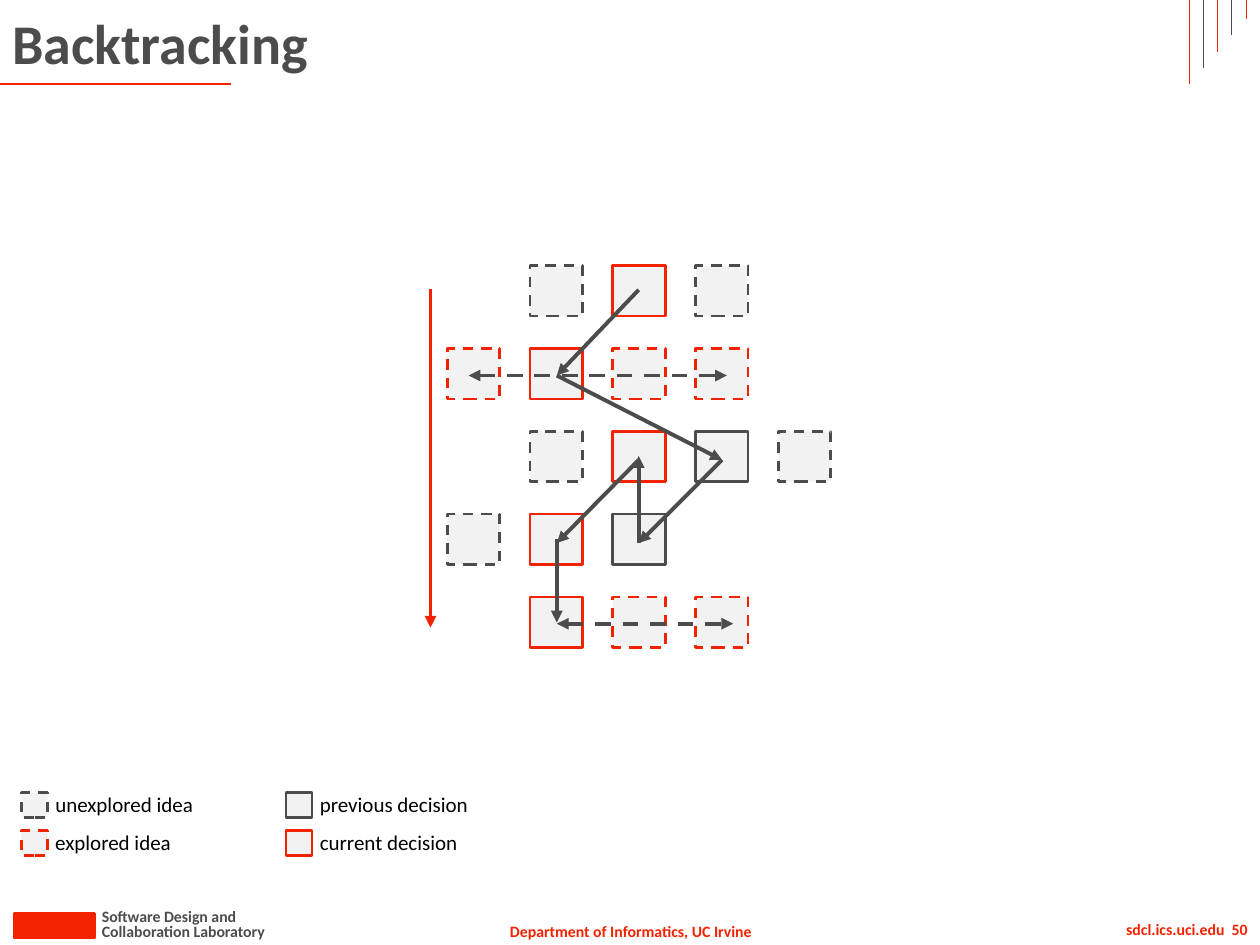
"""Build the Backtracking slide: a grid of ideas and the path of decisions through it."""
from typing import NamedTuple

from lxml import etree
from pptx import Presentation, util as u
from pptx.dml.color import RGBColor
from pptx.enum import dml, shapes, text
from pptx.oxml.ns import qn
from pptx.slide import Slide

RED = RGBColor(0xF3, 0x22, 0x00)
GRAY = RGBColor(0x4C, 0x4C, 0x4C)
PALE = RGBColor(0xF2, 0xF2, 0xF2)
BLACK = RGBColor(0x00, 0x00, 0x00)

GRID_LEFT, GRID_TOP, PITCH = 255.6, 151.9, 47.3
IDEA_WIDTH, IDEA_HEIGHT = 30, 28.8


class Status(NamedTuple):
    color: RGBColor
    dashed: bool


class LegendEntry(NamedTuple):
    label: str
    status: Status
    left: float
    top: float
    width: float


class Stroke(NamedTuple):
    start: tuple[float, float]
    end: tuple[float, float]
    color: RGBColor = GRAY
    width: float = 2.25
    dashed: bool = False
    arrows: tuple[str, ...] = ("tailEnd",)


UNEXPLORED = Status(GRAY, True)
EXPLORED = Status(RED, True)
PREVIOUS = Status(GRAY, False)
CURRENT = Status(RED, False)

IDEA_ROWS = [
    (1, [UNEXPLORED, CURRENT, UNEXPLORED]),
    (0, [EXPLORED, CURRENT, EXPLORED, EXPLORED]),
    (1, [UNEXPLORED, CURRENT, PREVIOUS, UNEXPLORED]),
    (0, [UNEXPLORED, CURRENT, PREVIOUS]),
    (1, [CURRENT, EXPLORED, EXPLORED]),
]

LEGEND = [
    LegendEntry("unexplored idea", UNEXPLORED, 12.2, 452.9, 94.3),
    LegendEntry("explored idea", EXPLORED, 12.2, 474.5, 81.4),
    LegendEntry("previous decision", PREVIOUS, 163.4, 452.9, 100),
    LegendEntry("current decision", CURRENT, 163.4, 474.5, 93.6),
]

BOTH_ENDS = ("headEnd", "tailEnd")
PATH = [
    Stroke((365, 165.6), (318.2, 214.6)),
    Stroke((246, 164.9), (246, 358.6), RED),
    Stroke((318.2, 214.6), (412.6, 262.8)),
    Stroke((412.6, 262.8), (365, 310.3)),
    Stroke((365, 310.3), (365, 260.6)),
    Stroke((267.8, 214.6), (415.4, 214.6), dashed=True, arrows=BOTH_ENDS),
    Stroke((318.2, 356.4), (419, 356.4), dashed=True, arrows=BOTH_ENDS),
    Stroke((365, 262.8), (318.2, 310.3)),
    Stroke((318.2, 308.2), (318.2, 355.7)),
]

TITLE_RULE = Stroke((0, 48), (131.8, 48), RED, 1.5, arrows=())
CORNER_BARS = [
    Stroke((679.6 + 8.1 * bar, 48.2 - 9.35 * bar), (679.6 + 8.1 * bar, 0),
           GRAY if bar % 2 else RED, 0.5, arrows=())
    for bar in range(5)
]


def add_words(slide: Slide, wording: str, left: float, top: float, width: float,
              height: float, *, size: float = 9, color: RGBColor = BLACK,
              bold: bool = True, wrap: bool = False,
              align: text.PP_ALIGN = text.PP_ALIGN.LEFT,
              anchor: text.MSO_ANCHOR = text.MSO_ANCHOR.TOP) -> None:
    box = slide.shapes.add_textbox(u.Pt(left), u.Pt(top), u.Pt(width), u.Pt(height))
    frame = box.text_frame
    frame.word_wrap = wrap
    frame.vertical_anchor = anchor
    paragraph = frame.paragraphs[0]
    paragraph.alignment = align
    run = paragraph.add_run()
    run.text = wording
    run.font.name = "Calibri"
    run.font.size = u.Pt(size)
    run.font.bold = bold
    run.font.color.rgb = color


def add_box(slide: Slide, status: Status, left: float, top: float,
            width: float = IDEA_WIDTH, height: float = IDEA_HEIGHT,
            fill: RGBColor = PALE) -> None:
    box = slide.shapes.add_shape(shapes.MSO_SHAPE.RECTANGLE, u.Pt(left), u.Pt(top),
                                 u.Pt(width), u.Pt(height))
    box.shadow.inherit = False
    box.fill.solid()
    box.fill.fore_color.rgb = fill
    box.line.color.rgb = status.color
    box.line.width = u.Pt(1.5)
    if status.dashed:
        box.line.dash_style = dml.MSO_LINE.DASH


def add_stroke(slide: Slide, stroke: Stroke) -> None:
    connector = slide.shapes.add_connector(
        shapes.MSO_CONNECTOR.STRAIGHT, *(u.Pt(length) for length in stroke.start + stroke.end))
    connector.line.color.rgb = stroke.color
    connector.line.width = u.Pt(stroke.width)
    if stroke.dashed:
        connector.line.dash_style = dml.MSO_LINE.DASH
    properties = connector._element.spPr
    for arrow in stroke.arrows:
        etree.SubElement(properties.find(qn("a:ln")), qn(f"a:{arrow}"), type="triangle")
    etree.SubElement(properties, qn("a:effectLst"))


def add_frame(slide: Slide) -> None:
    add_words(slide, "Department of Informatics, UC Irvine", 283, 523.4, 154.8, 18,
              color=RED, align=text.PP_ALIGN.CENTER)
    add_box(slide, CURRENT, 8, 522, 46, 14, fill=RED)
    add_words(slide, "Collaboration Laboratory", 51.1, 523.4, 110.2, 18, color=GRAY)
    add_words(slide, "Software Design and", 51.1, 514.8, 92.9, 18, color=GRAY)
    add_words(slide, "sdcl.ics.uci.edu  50", 564.5, 522, 155.5, 18,
              color=RED, wrap=True, align=text.PP_ALIGN.RIGHT)
    for stroke in [TITLE_RULE, *CORNER_BARS]:
        add_stroke(slide, stroke)
    add_words(slide, "Backtracking", 0, 0, 648, 48.2, size=32, color=GRAY,
              wrap=True, anchor=text.MSO_ANCHOR.MIDDLE)


def add_legend(slide: Slide) -> None:
    for entry in LEGEND:
        add_box(slide, entry.status, entry.left, entry.top, IDEA_WIDTH / 2, IDEA_HEIGHT / 2)
        add_words(slide, entry.label, entry.left + 12.3, entry.top - 4, entry.width, 21.6,
                  size=12, bold=False)


def main() -> None:
    deck = Presentation()
    deck.slide_width, deck.slide_height = u.Pt(720), u.Pt(540)
    slide = deck.slides.add_slide(deck.slide_layouts[6])
    add_frame(slide)
    for row, (first_column, statuses) in enumerate(IDEA_ROWS):
        for column, status in enumerate(statuses, first_column):
            add_box(slide, status, GRID_LEFT + PITCH * column, GRID_TOP + PITCH * row)
    for stroke in PATH:
        add_stroke(slide, stroke)
    add_legend(slide)
    deck.save("out.pptx")


if __name__ == "__main__":
    main()
